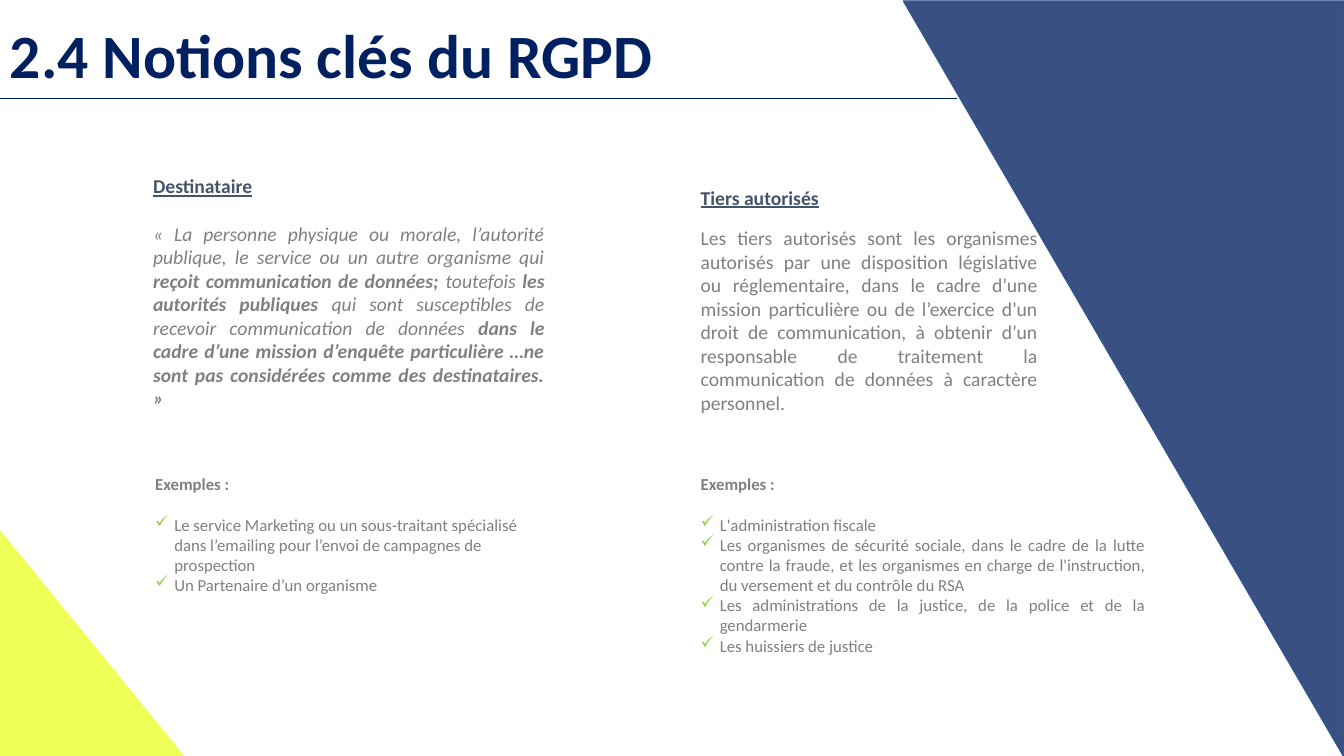
"""Build the slide on recipients and authorised third parties under the RGPD."""
from lxml import etree
from pptx import Presentation, util as u
from pptx.dml import color
from pptx.enum import shapes, text
from pptx.oxml import ns

WIDTH, HEIGHT = u.Inches(13.33), u.Inches(7.5)
FONT = "Calibri"
COLORS = {
    "navy": "002060", "blue": "325491", "yellow": "F0FF58",
    "heading": "44546A", "body": "808080", "check": "92D050",
}
LEFT, JUSTIFY = text.PP_ALIGN.LEFT, text.PP_ALIGN.JUSTIFY

DEFINITION = [
    ("« La personne physique ou morale, l’autorité publique, le service ou un autre organisme qui ", False),
    ("reçoit communication de données; ", True),
    ("toutefois", False),
    (" les autorités publiques ", True),
    ("qui sont susceptibles de recevoir communication de données ", False),
    ("dans le cadre d’une mission d’enquête particulière …ne sont pas considérées comme des destinataires. »", True),
]
THIRD_PARTIES = [(
    "Les tiers autorisés sont les organismes autorisés par une disposition législative ou réglementaire, "
    "dans le cadre d’une mission particulière ou de l’exercice d’un droit de communication, à obtenir d’un "
    "responsable de traitement la communication de données à caractère personnel.", False)]
RECIPIENT_EXAMPLES = [
    "Le service Marketing ou un sous-traitant spécialisé dans l’emailing pour l’envoi de campagnes de prospection",
    "Un Partenaire d’un organisme",
]
THIRD_PARTY_EXAMPLES = [
    "L'administration fiscale",
    "Les organismes de sécurité sociale, dans le cadre de la lutte contre la fraude, et les organismes "
    "en charge de l'instruction, du versement et du contrôle du RSA",
    "Les administrations de la justice, de la police et de la gendarmerie",
    "Les huissiers de justice",
]


def across(percent):
    """Return a share of the slide width."""
    return int(WIDTH * percent / 100)


def down(percent):
    """Return a share of the slide height."""
    return int(HEIGHT * percent / 100)


def place(left, top, width, height):
    """Turn percentages into a position and a size."""
    return across(left), down(top), across(width), down(height)


def rgb(name):
    """Look up a named colour."""
    return color.RGBColor.from_string(COLORS[name])


def add_triangle(slide, box, fill, rotation=0, opacity=100):
    """Draw a right triangle in a corner of the slide."""
    shape = slide.shapes.add_shape(shapes.MSO_SHAPE.RIGHT_TRIANGLE, *place(*box))
    shape.shadow.inherit = False
    shape.rotation = rotation
    shape.fill.solid()
    shape.fill.fore_color.rgb = rgb(fill)
    shape.line.width = u.Pt(1)
    shape.line.color.rgb = rgb("blue" if fill == "navy" else fill)
    if opacity < 100:
        tint = shape.fill._xPr.find(".//" + ns.qn("a:srgbClr"))
        etree.SubElement(tint, ns.qn("a:alpha"), val=str(opacity * 1000))


def add_rule(slide, right, top):
    """Draw the line under the title."""
    line = slide.shapes.add_connector(
        shapes.MSO_CONNECTOR.STRAIGHT, 0, down(top), across(right), down(top))
    line.line.color.rgb = rgb("navy")
    line.line.width = u.Pt(1)
    etree.SubElement(line._element.spPr, ns.qn("a:effectLst"))


def add_text_frame(slide, box):
    """Add a wrapping text box and return its frame."""
    frame = slide.shapes.add_textbox(*place(*box)).text_frame
    frame.word_wrap = True
    return frame


def style(run, size, ink, bold=False, italic=False, underline=False):
    """Set the font of a run."""
    font = run.font
    font.name, font.size, font.color.rgb = FONT, u.Pt(size), rgb(ink)
    font.bold, font.italic, font.underline = bold, italic, underline


def add_heading(frame, words, size, ink, gap=0, underline=False):
    """Write the first paragraph in bold, with a gap below."""
    paragraph = frame.paragraphs[0]
    paragraph.text = words
    paragraph.space_after = u.Pt(gap)
    style(paragraph.runs[0], size, ink, bold=True, underline=underline)
    return paragraph


def add_title(slide, words):
    """Write the slide title."""
    frame = add_text_frame(slide, (0, 2, 86.27, 11.47))
    frame.vertical_anchor = text.MSO_ANCHOR.MIDDLE
    add_heading(frame, words, 44, "navy").line_spacing = 0.9


def add_notion(slide, box, heading, gap, segments, italic=False):
    """Write a heading and its justified definition."""
    frame = add_text_frame(slide, box)
    add_heading(frame, heading, 14, "heading", gap, underline=True)
    paragraph = frame.add_paragraph()
    paragraph.alignment = JUSTIFY
    for words, bold in segments:
        run = paragraph.add_run()
        run.text = words
        style(run, 14, "body", bold, italic)


def add_check_mark(paragraph):
    """Give a paragraph a hanging green check mark."""
    properties = paragraph._p.get_or_add_pPr()
    indent = u.Inches(0.19)
    properties.set("marL", str(indent))
    properties.set("indent", str(-indent))
    bullet_color = etree.SubElement(properties, ns.qn("a:buClr"))
    etree.SubElement(bullet_color, ns.qn("a:srgbClr"), val=COLORS["check"])
    etree.SubElement(properties, ns.qn("a:buChar"), char="✓")


def add_examples(slide, box, examples, alignment):
    """Write a checked list of examples."""
    frame = add_text_frame(slide, box)
    add_heading(frame, "Exemples :", 12, "body", gap=14.6)
    for example in examples:
        paragraph = frame.add_paragraph()
        paragraph.text = example
        paragraph.alignment = alignment
        style(paragraph.runs[0], 12, "body")
        add_check_mark(paragraph)


def main():
    """Build and save the slide."""
    presentation = Presentation()
    presentation.slide_width, presentation.slide_height = WIDTH, HEIGHT
    slide = presentation.slides.add_slide(presentation.slide_layouts[6])
    add_triangle(slide, (67.22, 0.13, 32.78, 100), "navy", rotation=180, opacity=78)
    add_title(slide, "2.4 Notions clés du RGPD")
    add_notion(slide, (10.65, 22.4, 30.61, 32.8), "Destinataire", 17, DEFINITION, italic=True)
    add_examples(slide, (10.8, 62, 30.46, 17.47), RECIPIENT_EXAMPLES, LEFT)
    add_notion(slide, (51.39, 23.87, 26.56, 35.07), "Tiers autorisés", 12.2, THIRD_PARTIES)
    add_examples(slide, (51.39, 62, 34.58, 25.6), THIRD_PARTY_EXAMPLES, JUSTIFY)
    add_triangle(slide, (0, 70.27, 13.65, 29.73), "yellow")
    add_rule(slide, 71.19, 13.07)
    presentation.save("out.pptx")


if __name__ == "__main__":
    main()
